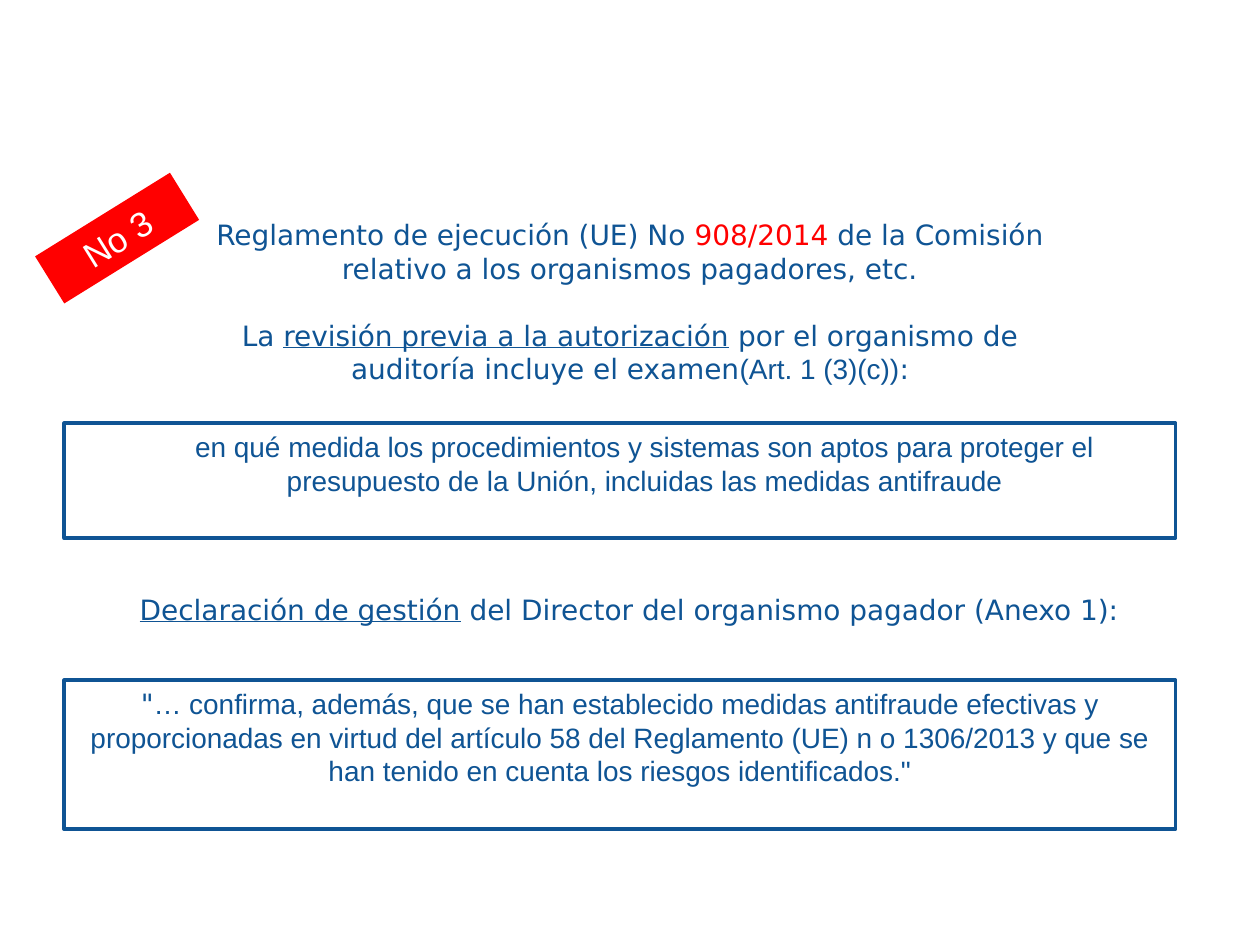
import pptx
import pptx.dml.color
import pptx.enum.shapes
import pptx.enum.text
import pptx.util
from pptx.util import Inches

BLUE = "0F5494"
RED = "FF0000"
WHITE = "FFFFFF"
SANS = "DejaVu Sans"
ARIAL = "Arial"


def color(value):
    return pptx.dml.color.RGBColor.from_string(value)


def add_text(paragraph, text, size=16, font=SANS, fill=BLUE, underline=False, italic=False):
    run = paragraph.add_run()
    run.text = text
    run.font.size = pptx.util.Pt(size)
    run.font.name = font
    run.font.color.rgb = color(fill)
    run.font.underline = underline
    run.font.italic = italic


class SlideBuilder:
    def __init__(self, presentation):
        self.slide = presentation.slides.add_slide(presentation.slide_layouts[6])

    def fill_frame(self, shape, paragraphs, gap=0, anchor=pptx.enum.text.MSO_ANCHOR.TOP):
        frame = shape.text_frame
        frame.word_wrap = True
        frame.vertical_anchor = anchor
        for index, runs in enumerate(paragraphs):
            paragraph = frame.add_paragraph() if index else frame.paragraphs[0]
            paragraph.alignment = pptx.enum.text.PP_ALIGN.CENTER
            if index:
                paragraph.space_before = pptx.util.Pt(gap)
            for text, style in runs:
                add_text(paragraph, text, **style)

    def text_box(self, left, top, width, height, paragraphs, gap=0):
        shape = self.slide.shapes.add_textbox(
            Inches(left), Inches(top), Inches(width), Inches(height))
        self.fill_frame(shape, paragraphs, gap)

    def rectangle(self, left, top, width, height):
        shape = self.slide.shapes.add_shape(
            pptx.enum.shapes.MSO_SHAPE.RECTANGLE,
            Inches(left), Inches(top), Inches(width), Inches(height))
        shape.shadow.inherit = False
        return shape

    def quote_box(self, top, height, runs, indent=0):
        shape = self.rectangle(0.51, top, 8.82, height)
        shape.fill.background()
        shape.line.color.rgb = color(BLUE)
        shape.line.width = pptx.util.Pt(2.25)
        shape.text_frame.margin_left = Inches(0.1 + indent)
        self.fill_frame(shape, [runs])

    def badge(self, left, top, width, height, text, rotation):
        shape = self.rectangle(left, top, width, height)
        shape.rotation = rotation
        shape.fill.solid()
        shape.fill.fore_color.rgb = color(RED)
        shape.line.fill.background()
        style = {"size": 20, "font": ARIAL, "fill": WHITE}
        self.fill_frame(shape, [[(text, style)]], anchor=pptx.enum.text.MSO_ANCHOR.MIDDLE)


def main():
    presentation = pptx.Presentation()
    presentation.slide_width = Inches(10)
    presentation.slide_height = Inches(7.5)
    builder = SlideBuilder(presentation)

    builder.text_box(1.3, 1.68, 7.4, 1.45, [
        [
            ("Reglamento de ejecución (UE) No ", {}),
            ("908/2014 ", {"fill": RED}),
            ("de la Comisión relativo a los organismos pagadores, etc.", {}),
        ],
        [
            ("La ", {}),
            ("revisión previa a la autorización", {"underline": True}),
            (" por el organismo de auditoría incluye el examen", {}),
            ("(Art. 1 (3)(c))", {"font": ARIAL}),
            (":", {}),
        ],
    ], gap=19)
    builder.quote_box(3.36, 0.91, [
        ("en qué medida los procedimientos y sistemas son aptos para proteger el "
         "presupuesto de la Unión, incluidas las medidas antifraude", {"font": ARIAL}),
    ], indent=0.39)
    builder.quote_box(5.4, 1.18, [
        ('"', {"italic": True}),
        ("… confirma, además, que se han establecido medidas antifraude efectivas y "
         "proporcionadas en virtud del artículo 58 del Reglamento (UE) n o 1306/2013 "
         'y que se han tenido en cuenta los riesgos identificados."', {"font": ARIAL}),
    ])
    builder.text_box(0.98, 4.65, 8.03, 0.64, [[
        ("Declaración de gestión", {"underline": True}),
        (" del Director del organismo pagador (Anexo 1):", {}),
    ]])
    builder.badge(0.3, 1.67, 1.26, 0.44, "No 3", 328.2)
    presentation.save("out.pptx")


if __name__ == "__main__":
    main()
